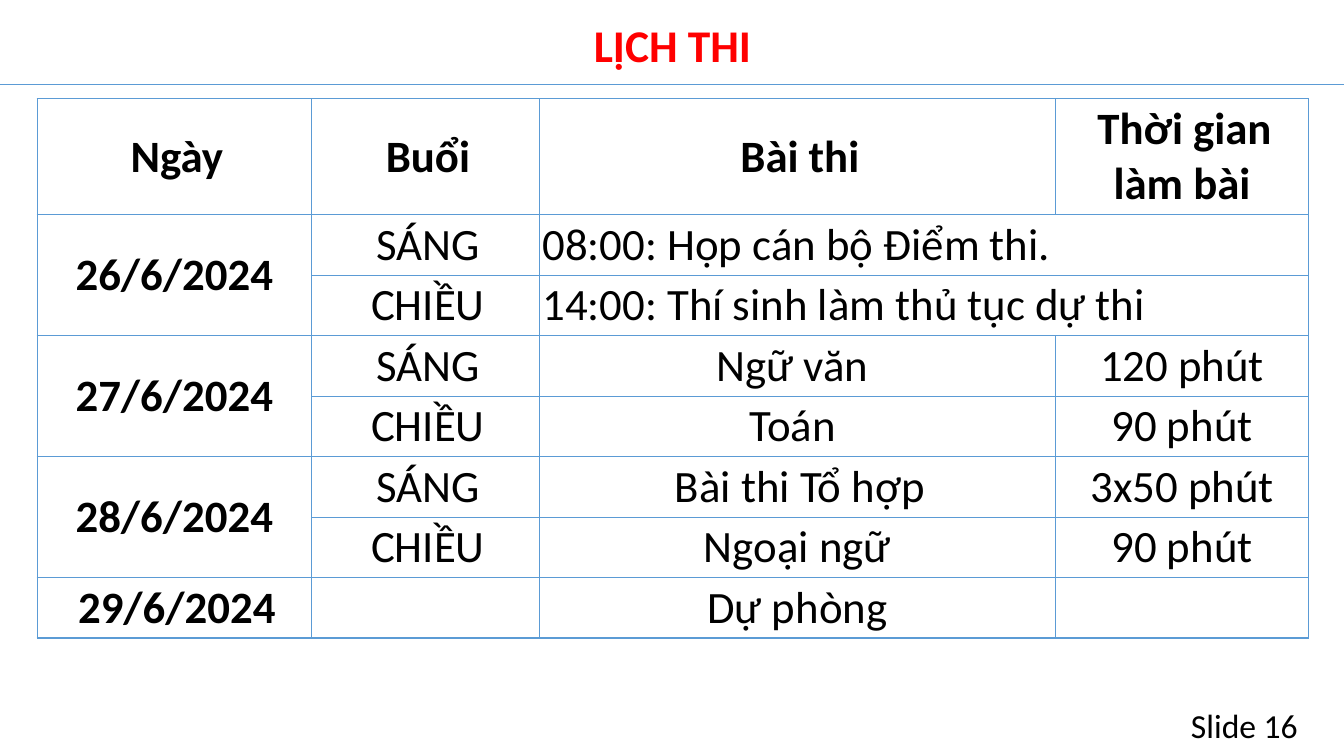
from dataclasses import dataclass

from lxml.etree import SubElement as Sub
from pptx import Presentation
from pptx.dml.color import RGBColor as Rgb
from pptx.enum.shapes import MSO_CONNECTOR as Link
from pptx.enum.text import MSO_ANCHOR as Anchor, MSO_AUTO_SIZE as Auto, PP_ALIGN as Align
from pptx.oxml.ns import qn
from pptx.slide import Slide
from pptx.table import Table, _Cell as Cell
from pptx.text.text import _Paragraph as Para
from pptx.util import Inches, Pt


@dataclass(frozen=True)
class Theme:
    """Colours, font and type sizes."""
    font: str = "Calibri"
    ink: str = "000000"
    red: str = "FF0000"
    blue: str = "5B9BD5"
    head: float = 32.4
    body: float = 32
    foot: float = 24
    rule: float = 0.5
    edge: float = 1


@dataclass(frozen=True)
class Entry:
    """One table cell with its place, look and span."""
    row: int
    col: int
    text: str
    bold: bool = False
    dent: float = 0
    align: Align = Align.CENTER
    tall: int = 1
    wide: int = 1


@dataclass(frozen=True)
class Label:
    """One free text box."""
    text: str
    box: tuple[float, float, float, float]
    size: float
    color: str
    align: Align
    bold: bool = False
    anchor: Anchor = Anchor.TOP
    fit: Auto = Auto.NONE
    lead: float = 1


LOOK = Theme()
DENT = 0.05
PAD = Inches(0.03)
WIDE = 13.33
COLS = (2.72, 2.26, 5.12, 2.51)
ROWS = (1.15,) + (0.6,) * 7

LABELS = (
    Label("Slide 16", (10.29, 6.94, 2.68, 0.5), LOOK.foot, LOOK.ink, Align.RIGHT,
          fit=Auto.SHAPE_TO_FIT_TEXT),
    Label("LỊCH THI", (0.37, 0.19, 12.6, 0.57), LOOK.head, LOOK.red, Align.CENTER,
          bold=True, anchor=Anchor.MIDDLE, lead=0.9),
)
HEADS = ("Ngày", "Buổi", "Bài thi", "Thời gian làm bài")
DAYS = ("26/6/2024", "27/6/2024", "28/6/2024")
PARTS = ("SÁNG", "CHIỀU")
EXAMS = (
    Entry(1, 2, "08:00: Họp cán bộ Điểm thi.", align=Align.LEFT, wide=2),
    Entry(2, 2, "14:00: Thí sinh làm thủ tục dự thi", align=Align.JUSTIFY, wide=2),
    Entry(3, 2, "Ngữ văn ", dent=-0.01),
    Entry(3, 3, "120 phút", dent=-0.01),
    Entry(4, 2, "Toán "),
    Entry(4, 3, "90 phút"),
    Entry(5, 2, "Bài thi Tổ hợp", dent=DENT),
    Entry(5, 3, "3x50 phút", dent=-0.01),
    Entry(6, 2, "Ngoại ngữ"),
    Entry(6, 3, "90 phút"),
    Entry(7, 0, "29/6/2024", bold=True, dent=DENT),
    Entry(7, 2, "Dự phòng"),
)


def plan() -> list[Entry]:
    """List every filled cell of the timetable."""
    heads = [Entry(0, i, text, True, DENT) for i, text in enumerate(HEADS)]
    days = [Entry(1 + 2 * i, 0, text, True, tall=2) for i, text in enumerate(DAYS)]
    parts = [Entry(1 + 2 * i + j, 1, text, dent=DENT)
             for i in range(len(DAYS)) for j, text in enumerate(PARTS)]
    return [*heads, *days, *parts, *EXAMS]


def write(para: Para, text: str, size: float, color: str, bold: bool) -> None:
    """Add one styled run to a paragraph."""
    run = para.add_run()
    run.text = text
    font = run.font
    font.name, font.size, font.bold = LOOK.font, Pt(size), bold
    font.color.rgb = Rgb.from_string(color)


def label(slide: Slide, item: Label) -> None:
    """Draw a text box."""
    frame = slide.shapes.add_textbox(*map(Inches, item.box)).text_frame
    frame.word_wrap = True
    frame.auto_size = item.fit
    frame.vertical_anchor = item.anchor
    para = frame.paragraphs[0]
    para.alignment, para.line_spacing = item.align, item.lead
    write(para, item.text, item.size, item.color, item.bold)


def rule(slide: Slide) -> None:
    """Draw the line under the title."""
    line = slide.shapes.add_connector(
        Link.STRAIGHT, 0, Inches(0.84), Inches(WIDE), Inches(0.84))
    line.line.color.rgb = Rgb.from_string(LOOK.blue)
    line.line.width = Pt(LOOK.rule)
    Sub(line._element.spPr, qn("a:effectLst"))


def frame(cell: Cell) -> None:
    """Give a cell its borders and no fill."""
    props = cell._tc.get_or_add_tcPr()
    for side in ("lnL", "lnR", "lnT", "lnB"):
        line = Sub(props, qn(f"a:{side}"), w=str(Pt(LOOK.edge)))
        Sub(Sub(line, qn("a:solidFill")), qn("a:srgbClr"), val=LOOK.blue)
    cell.fill.background()


def fill(table: Table, item: Entry) -> None:
    """Write one entry, merging cells where it spans."""
    cell = table.cell(item.row, item.col)
    if item.tall * item.wide > 1:
        cell.merge(table.cell(item.row + item.tall - 1, item.col + item.wide - 1))
    cell.vertical_anchor = Anchor.MIDDLE
    cell.margin_left = cell.margin_right = cell.margin_top = cell.margin_bottom = PAD
    para = cell.text_frame.paragraphs[0]
    para.alignment = item.align
    props = para._p.get_or_add_pPr()
    props.set("marL", "0")
    props.set("indent", str(Inches(item.dent)))
    write(para, item.text, LOOK.body, LOOK.ink, item.bold)


def grid(slide: Slide) -> None:
    """Draw the exam timetable."""
    box = map(Inches, (0.37, 0.98, sum(COLS), sum(ROWS)))
    table = slide.shapes.add_table(len(ROWS), len(COLS), *box).table
    table.first_row = table.horz_banding = False
    for col, size in zip(table.columns, COLS):
        col.width = Inches(size)
    for row, size in zip(table.rows, ROWS):
        row.height = Inches(size)
    for cell in table.iter_cells():
        frame(cell)
    for item in plan():
        fill(table, item)


def main() -> None:
    """Build and save the slide."""
    deck = Presentation()
    deck.slide_width, deck.slide_height = Inches(WIDE), Inches(7.5)
    slide = deck.slides.add_slide(deck.slide_layouts[6])
    rule(slide)
    for item in LABELS:
        label(slide, item)
    grid(slide)
    deck.save("out.pptx")


if __name__ == "__main__":
    main()
